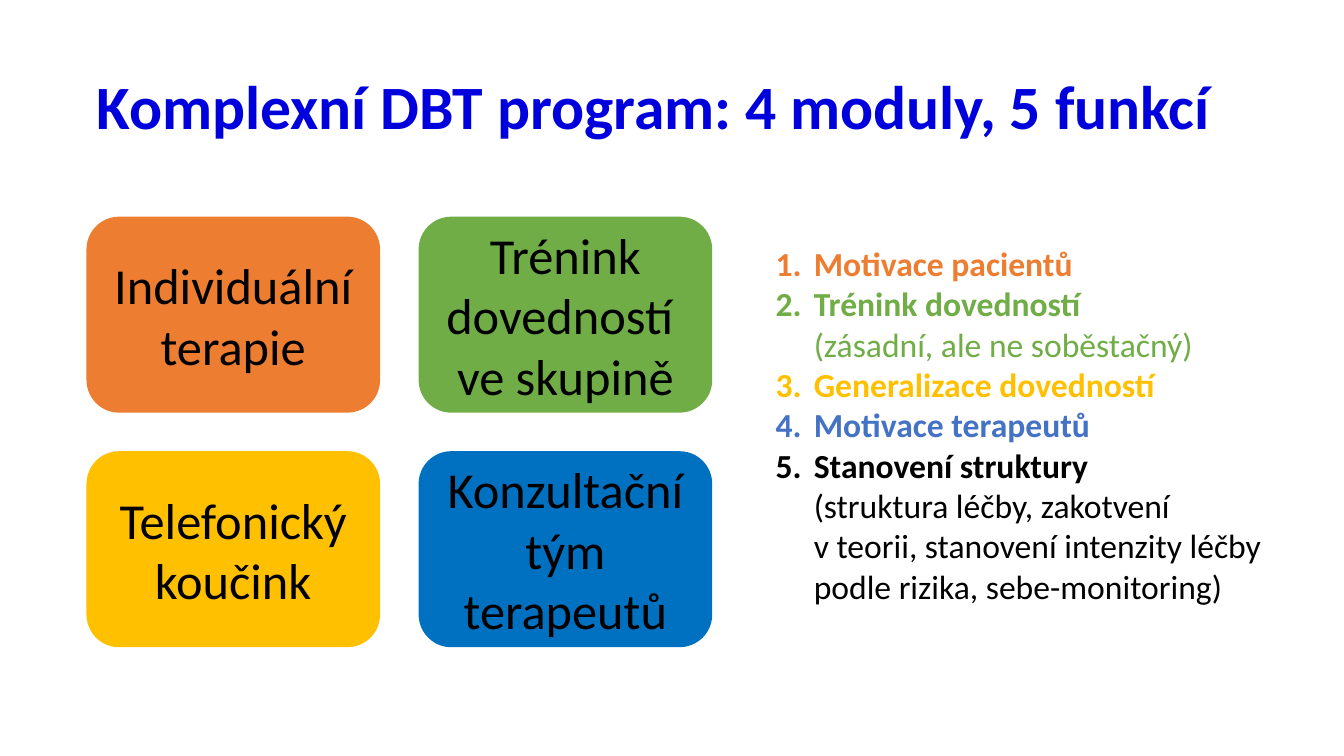
import pptx
import pptx.dml.color
import pptx.enum.shapes
import pptx.enum.text
import pptx.oxml
import pptx.oxml.ns
import pptx.util

Cm = pptx.util.Cm
ALIGN = pptx.enum.text.PP_ALIGN
ANCHOR = pptx.enum.text.MSO_ANCHOR
INK = "000000"

CARDS = [
    ("Individuální\nterapie", "ED7D31"),
    ("Trénink dovedností \nve skupině", "70AD47"),
    ("Telefonický koučink", "FFC000"),
    ("Konzultační tým terapeutů", "0070C0"),
]

# Heading, plain detail, colour
GOALS = [
    ("Motivace pacientů", "", "ED7D31"),
    ("Trénink dovedností", "(zásadní, ale ne soběstačný)", "70AD47"),
    ("Generalizace dovedností", "", "FFC000"),
    ("Motivace terapeutů", "", "4472C4"),
    ("Stanovení struktury",
     "(struktura léčby, zakotvení\nv teorii, stanovení intenzity léčby\n"
     "podle rizika, sebe-monitoring)", INK),
]


def color(code):
    return pptx.dml.color.RGBColor.from_string(code)


def write(para, text, size=24, hue=INK, bold=False, align=ALIGN.LEFT):
    """Append text to a paragraph, turning newlines into line breaks."""
    para.alignment = align
    for i, line in enumerate(text.split("\n")):
        if i:
            para.add_line_break()
        run = para.add_run()
        run.text = line
        run.font.name = "Calibri"
        run.font.size = pptx.util.Pt(size)
        run.font.bold = bold
        run.font.color.rgb = color(hue)


def number(para, indent):
    """Give a paragraph an automatic number with a hanging indent."""
    props = para._p.get_or_add_pPr()
    props.set("marL", str(indent))
    props.set("indent", str(-indent))
    mark = pptx.oxml.parse_xml(
        '<a:buAutoNum %s type="arabicPeriod"/>' % pptx.oxml.ns.nsdecls("a"))
    props.append(mark)


def frame(slide, left, top, width, height):
    box = slide.shapes.add_textbox(Cm(left), Cm(top), Cm(width), Cm(height))
    box.text_frame.word_wrap = True
    return box.text_frame


def title(slide, left, top, width, height):
    area = frame(slide, left, top, width, height)
    area.vertical_anchor = ANCHOR.MIDDLE
    para = area.paragraphs[0]
    para.line_spacing = 0.9
    write(para, "Komplexní DBT program: 4 moduly, 5 funkcí",
          size=44, hue="0000DC", bold=True)


def grid(slide, left, top, width, height, gap=0.97, cols=2):
    wide = (width - gap * (cols - 1)) / cols
    rows = len(CARDS) // cols
    high = (height - gap * (rows - 1)) / rows
    for i, (text, hue) in enumerate(CARDS):
        row, col = divmod(i, cols)
        card = slide.shapes.add_shape(
            pptx.enum.shapes.MSO_SHAPE.ROUNDED_RECTANGLE,
            Cm(left + col * (wide + gap)), Cm(top + row * (high + gap)),
            Cm(wide), Cm(high))
        card.shadow.inherit = False
        card.fill.solid()
        card.fill.fore_color.rgb = color(hue)
        card.line.fill.background()
        area = card.text_frame
        area.word_wrap = True
        area.vertical_anchor = ANCHOR.MIDDLE
        write(area.paragraphs[0], text, size=36, align=ALIGN.CENTER)


def goals(slide, left, top, width, height):
    area = frame(slide, left, top, width, height)
    for i, (head, note, hue) in enumerate(GOALS):
        para = area.add_paragraph() if i else area.paragraphs[0]
        number(para, Cm(0.96))
        write(para, head, hue=hue, bold=True)
        if note:
            para.add_line_break()
            write(para, note, hue=hue)


def main():
    deck = pptx.Presentation()
    deck.slide_width, deck.slide_height = Cm(33.87), Cm(19.05)
    slide = deck.slides.add_slide(deck.slide_layouts[6])
    title(slide, 2.18, 0.91, 31.37, 3.68)
    grid(slide, 2.18, 5.46, 15.77, 10.85)
    goals(slide, 19.3, 6, 14.5, 9.5)
    deck.save("out.pptx")


if __name__ == "__main__":
    main()
